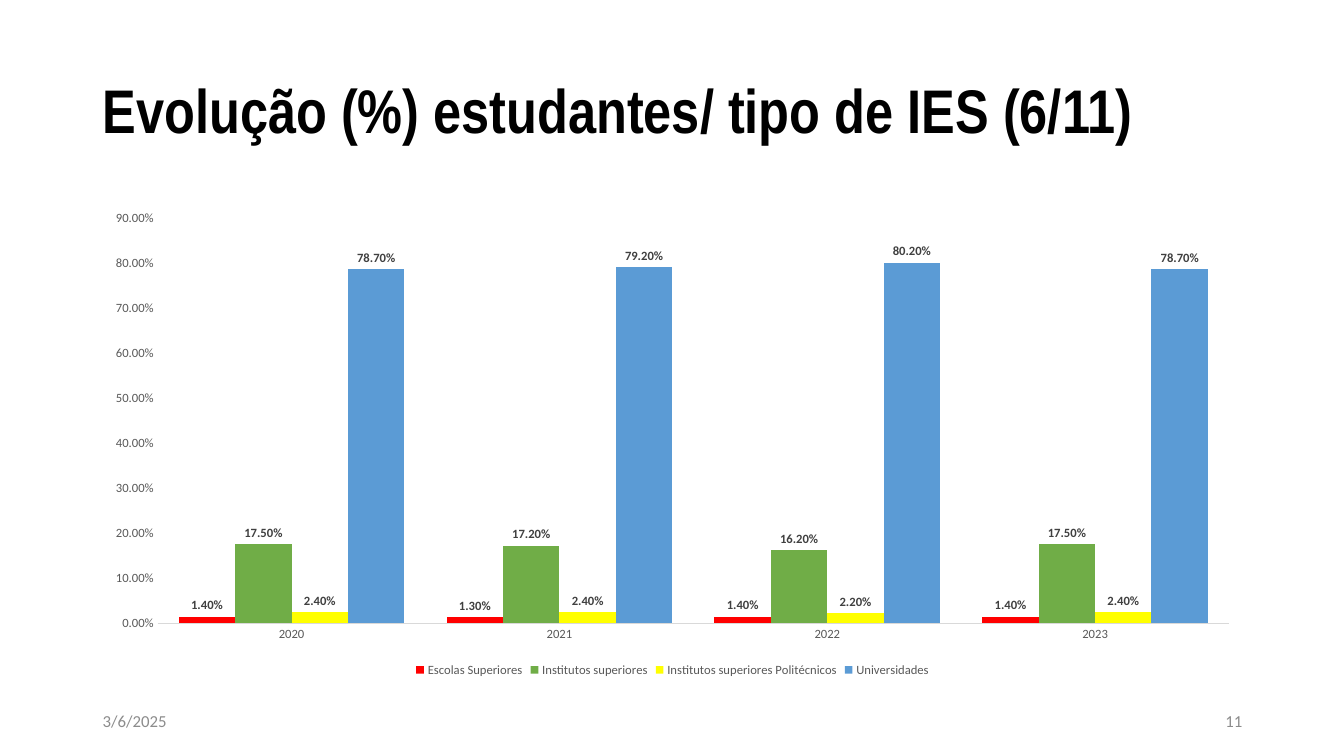
from pptx import Presentation
from pptx.chart.data import CategoryChartData
from pptx.dml.color import RGBColor
from pptx.enum.chart import XL_CHART_TYPE, XL_LABEL_POSITION, XL_LEGEND_POSITION, XL_TICK_MARK
from pptx.enum.text import MSO_ANCHOR, PP_ALIGN
from pptx.util import Inches, Pt

COLUMNS = XL_CHART_TYPE.COLUMN_CLUSTERED
OUTSIDE_END = XL_LABEL_POSITION.OUTSIDE_END
BOTTOM = XL_LEGEND_POSITION.BOTTOM
NO_TICK = XL_TICK_MARK.NONE
MIDDLE = MSO_ANCHOR.MIDDLE
LEFT, RIGHT = PP_ALIGN.LEFT, PP_ALIGN.RIGHT

MARGIN, CONTENT_WIDTH = 0.92, 11.5
FOOTER_TOP, FOOTER_WIDTH, FOOTER_HEIGHT = 6.95, 3, 0.4

YEARS = ["2020", "2021", "2022", "2023"]
INSTITUTIONS = [
    ("Escolas Superiores", "FF0000", [0.014, 0.013, 0.014, 0.014]),
    ("Institutos superiores", "70AD47", [0.175, 0.172, 0.162, 0.175]),
    ("Institutos superiores Politécnicos", "FFFF00", [0.024, 0.024, 0.022, 0.024]),
    ("Universidades", "5B9BD5", [0.787, 0.792, 0.802, 0.787]),
]


def rgb(value):
    return RGBColor.from_string(value)


class SlideBuilder:
    TITLE_FONT, BODY_FONT = "Arial Narrow", "Calibri"
    BLACK, LABEL, AXIS, FOOTER, RULE = "000000", "404040", "595959", "8C8C8C", "D9D9D9"
    PERCENT = "0.00%"

    def __init__(self, slide):
        self.slide = slide

    def style_font(self, font, size, color, name=BODY_FONT, bold=False):
        font.size = Pt(size)
        font.name = name
        font.bold = bold
        font.color.rgb = rgb(color)

    def text(self, box, content, size, color, name=BODY_FONT, bold=False,
             align=LEFT, line_spacing=1.0):
        frame = self.slide.shapes.add_textbox(*map(Inches, box)).text_frame
        frame.word_wrap = True
        frame.vertical_anchor = MIDDLE
        paragraph = frame.paragraphs[0]
        paragraph.alignment = align
        paragraph.line_spacing = line_spacing
        run = paragraph.add_run()
        run.text = content
        self.style_font(run.font, size, color, name, bold)

    def title(self, box, content):
        self.text(box, content, 44, self.BLACK, self.TITLE_FONT, True, line_spacing=0.9)

    def footer(self, left, content, align=LEFT):
        box = (left, FOOTER_TOP, FOOTER_WIDTH, FOOTER_HEIGHT)
        self.text(box, content, 12, self.FOOTER, align=align)

    def column_chart(self, box, categories, series_rows):
        data = CategoryChartData(number_format=self.PERCENT)
        data.categories = categories
        for name, _, values in series_rows:
            data.add_series(name, values)
        chart = self.slide.shapes.add_chart(COLUMNS, *map(Inches, box), data).chart
        self.style_font(chart.font, 10, self.BLACK)
        chart.has_title = False

        chart.has_legend = True
        chart.legend.position = BOTTOM
        chart.legend.include_in_layout = False
        self.style_font(chart.legend.font, 9, self.AXIS)

        for axis in (chart.category_axis, chart.value_axis):
            axis.major_tick_mark = axis.minor_tick_mark = NO_TICK
            axis.has_major_gridlines = False
            self.style_font(axis.tick_labels.font, 9, self.AXIS)
        category_line = chart.category_axis.format.line
        category_line.color.rgb = rgb(self.RULE)
        category_line.width = Pt(0.75)
        chart.value_axis.format.line.fill.background()
        chart.value_axis.minimum_scale = 0
        chart.value_axis.maximum_scale = 0.9
        chart.value_axis.major_unit = 0.1
        chart.value_axis.tick_labels.number_format = self.PERCENT
        chart.value_axis.tick_labels.number_format_is_linked = False

        plot = chart.plots[0]
        plot.gap_width = 75
        plot.overlap = 0
        plot.vary_by_categories = False
        for series, (_, color, _) in zip(plot.series, series_rows):
            series.format.fill.solid()
            series.format.fill.fore_color.rgb = rgb(color)
            series.invert_if_negative = False
            labels = series.data_labels
            labels.show_value = True
            labels.position = OUTSIDE_END
            labels.number_format = self.PERCENT
            labels.number_format_is_linked = False
            self.style_font(labels.font, 9, self.LABEL, bold=True)


def main():
    deck = Presentation()
    deck.slide_width, deck.slide_height = Inches(13.33), Inches(7.5)
    builder = SlideBuilder(deck.slides.add_slide(deck.slide_layouts[6]))
    builder.title((MARGIN, 0.4, CONTENT_WIDTH, 1.45),
                  "Evolução (%) estudantes/ tipo de IES (6/11)")
    builder.column_chart((MARGIN, 2, CONTENT_WIDTH, 4.76), YEARS, INSTITUTIONS)
    builder.footer(MARGIN, "3/6/2025")
    builder.footer(MARGIN + CONTENT_WIDTH - FOOTER_WIDTH, "11", RIGHT)
    deck.save("out.pptx")


if __name__ == "__main__":
    main()
